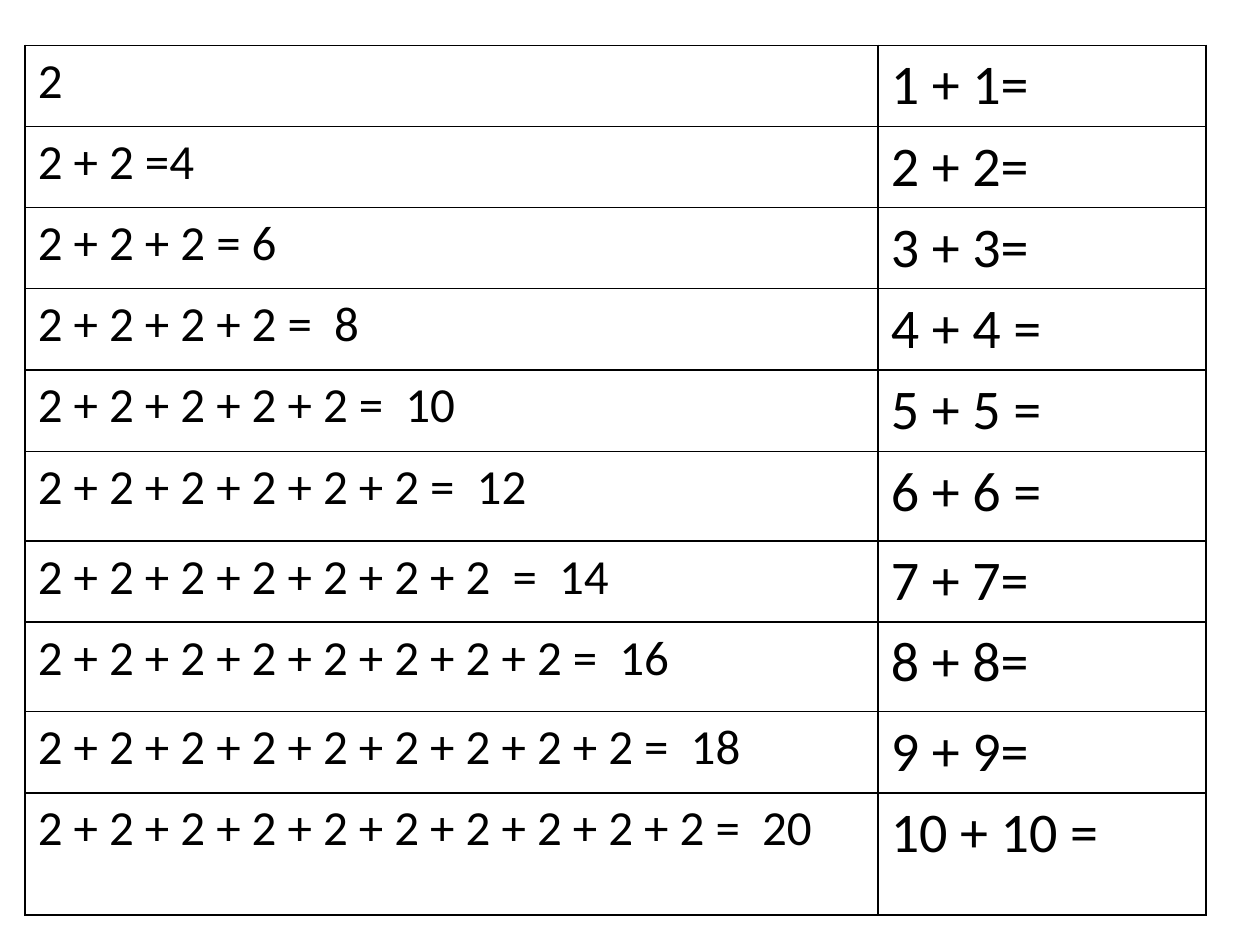
from lxml import etree
from pptx import Presentation
from pptx.dml.color import RGBColor
from pptx.oxml.ns import qn
from pptx.util import Inches, Pt

COLORS = {"ink": "000000", "paper": "FFFFFF"}
COLUMN_WIDTHS = [6.77, 2.6]
ROW_HEIGHTS = [0.64, 0.64, 0.64, 0.64, 0.65, 0.71, 0.64, 0.71, 0.64, 0.97]

# Ending of each sum of twos, and the equals sign of each double
SUM_ENDINGS = ["", " =4", " = 6", " =  8", " =  10", " =  12",
               "  =  14", " =  16", " =  18", " =  20"]
DOUBLE_ENDINGS = ["=", "=", "=", " =", " =", " =", "=", "=", "=", " ="]


def write_cell(cell, text, size, font="Calibri", color=COLORS["ink"]):
    cell.fill.solid()
    cell.fill.fore_color.rgb = RGBColor.from_string(COLORS["paper"])
    run = cell.text_frame.paragraphs[0].add_run()
    run.text = text
    run.font.size = Pt(size)
    run.font.name = font
    run.font.bold = False
    run.font.color.rgb = RGBColor.from_string(color)


def add_borders(cell, color=COLORS["ink"], width=1):
    properties = cell._tc.get_or_add_tcPr()
    for position, side in enumerate(["a:lnL", "a:lnR", "a:lnT", "a:lnB"]):
        line = etree.Element(qn(side), w=str(Pt(width)))
        fill = etree.SubElement(line, qn("a:solidFill"))
        etree.SubElement(fill, qn("a:srgbClr"), val=color)
        properties.insert(position, line)  # borders come before the fill


prs = Presentation()
prs.slide_width = Inches(10)
prs.slide_height = Inches(7.5)
slide = prs.slides.add_slide(prs.slide_layouts[6])

sums = slide.shapes.add_table(
    len(ROW_HEIGHTS), len(COLUMN_WIDTHS), Inches(0.2), Inches(0.36),
    Inches(sum(COLUMN_WIDTHS)), Inches(sum(ROW_HEIGHTS))).table
sums.first_row = False
sums.horz_banding = False

for column, width in zip(sums.columns, COLUMN_WIDTHS):
    column.width = Inches(width)
for row, height in zip(sums.rows, ROW_HEIGHTS):
    row.height = Inches(height)

for number, (sum_ending, double_ending) in enumerate(
        zip(SUM_ENDINGS, DOUBLE_ENDINGS), start=1):
    twos, double = sums.rows[number - 1].cells
    write_cell(twos, " + ".join(["2"] * number) + sum_ending, size=28)
    write_cell(double, f"{number} + {number}{double_ending}", size=32)
    add_borders(twos)
    add_borders(double)

prs.save("out.pptx")
